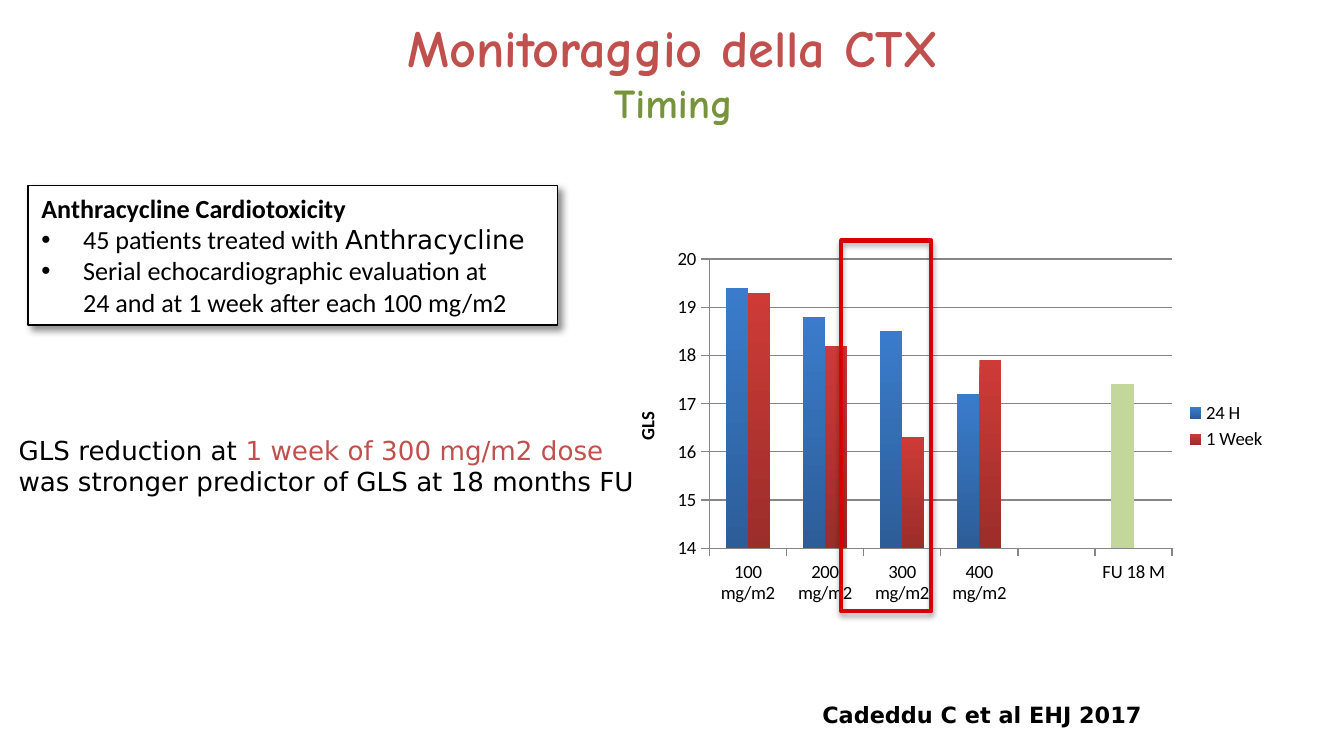
"""Build a slide on CTX monitoring timing with a GLS column chart."""
from lxml.etree import SubElement
from pptx import Presentation
from pptx.chart.data import CategoryChartData
from pptx.dml.color import RGBColor
from pptx.enum.chart import XL_CHART_TYPE as CT, XL_LEGEND_POSITION as LP, XL_TICK_MARK as TM
from pptx.enum.shapes import MSO_SHAPE
from pptx.enum.text import MSO_ANCHOR, MSO_AUTO_SIZE, PP_ALIGN
from pptx.oxml import parse_xml
from pptx.oxml.ns import nsdecls, qn
from pptx.util import Inches, Pt

BLACK = RGBColor(0x00, 0x00, 0x00)
WHITE = RGBColor(0xFF, 0xFF, 0xFF)
RED = RGBColor(0xC0, 0x50, 0x4D)
GREEN = RGBColor(0x77, 0x93, 0x3C)
FRAME_RED = RGBColor(0xD8, 0x00, 0x05)
GRID = RGBColor(0x86, 0x86, 0x86)
FOLLOW_UP = RGBColor(0xC3, 0xD6, 0x9B)
BLUE_BAR = (RGBColor(0x3A, 0x7C, 0xCB), RGBColor(0x2C, 0x5D, 0x98))
RED_BAR = (RGBColor(0xCE, 0x3B, 0x37), RGBColor(0x9B, 0x2D, 0x2A))
SANS, BODY, COMIC = "DejaVu Sans", "Calibri", "Comic Neue"

TITLE = [[("Monitoraggio della CTX\n", dict(size=28, color=RED)),
          ("Timing", dict(size=22, color=GREEN))]]
STUDY = [
    [("Anthracycline Cardiotoxicity", dict(bold=True))],
    [("45 patients treated with ", {}), ("Anthracycline", dict(font=SANS))],
    [("Serial echocardiographic evaluation at \n24 and at 1 week after each 100 mg/m2", {})],
]
FINDING = [[("GLS reduction at ", {}),
            ("1 week of 300 mg/m2 dose \n", dict(color=RED)),
            ("was stronger predictor of GLS at 18 months FU", {})]]
CITATION = [[("Cadeddu C et al EHJ 2017", {})]]

CATEGORIES = ["100 mg/m2", "200 mg/m2", "300 mg/m2", "400 mg/m2", "", "FU 18 M"]
SERIES = [("24 H", (19.4, 18.8, 18.5, 17.2, None, 17.4), BLUE_BAR),
          ("1 Week", (19.3, 18.2, 16.3, 17.9, None, None), RED_BAR)]
PLOT = dict(x=0.15, y=0.05, w=0.69, h=0.78)


def write(tf, paragraphs, size=14, font=BODY, color=BLACK, bold=False,
          align=PP_ALIGN.LEFT, anchor=MSO_ANCHOR.TOP, bullets_from=None):
    """Fill a text frame with formatted runs; a newline becomes a line break."""
    tf.word_wrap = True
    tf.vertical_anchor = anchor
    for i, runs in enumerate(paragraphs):
        p = tf.add_paragraph() if i else tf.paragraphs[0]
        p.alignment = align
        if bullets_from is not None and i >= bullets_from:
            pPr = p._p.get_or_add_pPr()
            pPr.set("marL", str(Inches(0.31)))
            pPr.set("indent", str(-Inches(0.31)))
            SubElement(pPr, qn("a:buFont")).set("typeface", "Arial")
            SubElement(pPr, qn("a:buChar")).set("char", "•")
        for text, own in runs:
            fmt = dict(size=size, font=font, color=color, bold=bold) | own
            for j, line in enumerate(text.split("\n")):
                if j:
                    p.add_line_break()
                if line:
                    r = p.add_run()
                    r.text = line
                    r.font.size, r.font.name = Pt(fmt["size"]), fmt["font"]
                    r.font.bold, r.font.color.rgb = fmt["bold"], fmt["color"]


def add_text(s, box, paragraphs, grow=True, **fmt):
    """Add a text box."""
    tf = s.shapes.add_textbox(*map(Inches, box)).text_frame
    write(tf, paragraphs, **fmt)
    tf.auto_size = MSO_AUTO_SIZE.SHAPE_TO_FIT_TEXT if grow else MSO_AUTO_SIZE.NONE


def add_box(s, box, line, width, alpha, blur, dist, angle):
    """Add an unfilled rectangle with an outer shadow."""
    sp = s.shapes.add_shape(MSO_SHAPE.RECTANGLE, *map(Inches, box))
    sp.fill.background()
    sp.line.color.rgb, sp.line.width = line, Pt(width)
    sp.shadow.inherit = False
    sp._element.spPr.find(qn("a:effectLst")).append(parse_xml(
        f'<a:outerShdw {nsdecls("a")} blurRad="{Pt(blur)}" dist="{Pt(dist)}" '
        f'dir="{angle * 60000}" rotWithShape="0"><a:srgbClr val="000000">'
        f'<a:alpha val="{alpha * 1000}"/></a:srgbClr></a:outerShdw>'))
    return sp


def add_gls_chart(s, box):
    """Add the clustered columns of GLS by dose."""
    data = CategoryChartData()
    data.categories = CATEGORIES
    for name, values, _ in SERIES:
        data.add_series(name, values)
    chart = s.shapes.add_chart(CT.COLUMN_CLUSTERED, *map(Inches, box), data).chart
    chart.font.size, chart.font.name, chart.font.color.rgb = Pt(10), BODY, BLACK
    chart.has_title = False
    chart.has_legend = True
    chart.legend.position, chart.legend.include_in_layout = LP.RIGHT, False

    plot = chart.plots[0]
    plot.gap_width, plot.overlap, plot.vary_by_categories = 150, 0, False
    for series, (_, _, stops) in zip(plot.series, SERIES):
        series.invert_if_negative = False
        fill = series.format.fill
        fill.gradient()
        fill.gradient_angle = 270
        for stop, color in zip(fill.gradient_stops, stops):
            stop.color.rgb = color
    follow_up = plot.series[0].points[len(CATEGORIES) - 1].format.fill
    follow_up.solid()
    follow_up.fore_color.rgb = FOLLOW_UP

    va, ca = chart.value_axis, chart.category_axis
    va.minimum_scale, va.maximum_scale, va.major_unit = 14, 20, 1
    va.tick_labels.number_format, va.tick_labels.number_format_is_linked = "0", False
    va.major_gridlines.format.line.color.rgb = GRID
    for axis in (va, ca):
        axis.major_tick_mark = TM.OUTSIDE
        axis.format.line.color.rgb = GRID
    write(va.axis_title.text_frame, [[("GLS", {})]], size=10, bold=True)

    area = chart._chartSpace.chart.plotArea
    for old in area.findall(qn("c:layout")):
        area.remove(old)
    parts = "".join(f'<c:{k} val="{v}"/>' for k, v in PLOT.items())
    area.insert(0, parse_xml(
        f'<c:layout {nsdecls("c")}><c:manualLayout><c:layoutTarget val="inner"/>'
        f'<c:xMode val="edge"/><c:yMode val="edge"/>{parts}</c:manualLayout></c:layout>'))


def main():
    prs = Presentation()
    prs.slide_width = Inches(10)
    prs.slide_height = prs.slide_width * 9 // 16
    s = prs.slides.add_slide(prs.slide_layouts[6])
    add_gls_chart(s, (4.53, 1.79, 4.99, 2.76))
    add_text(s, (6.02, 5.17, 3.66, 0.3), CITATION, size=12, font=SANS, bold=True)
    study = add_box(s, (0.21, 1.38, 3.94, 1.04), BLACK, 0.75, 43, 4, 3, 45)
    study.fill.solid()
    study.fill.fore_color.rgb = WHITE
    write(study.text_frame, STUDY, bullets_from=1)
    study.text_frame.auto_size = MSO_AUTO_SIZE.SHAPE_TO_FIT_TEXT
    add_box(s, (6.26, 1.79, 0.67, 2.76), FRAME_RED, 2.25, 35, 3.1, 1.8, 90)
    add_text(s, (0.04, 3.18, 5, 0.57), FINDING, font=SANS)
    add_text(s, (0.51, 0.06, 9, 0.94), TITLE, grow=False, font=COMIC, bold=True,
             align=PP_ALIGN.CENTER, anchor=MSO_ANCHOR.MIDDLE)
    prs.save("out.pptx")


if __name__ == "__main__":
    main()
